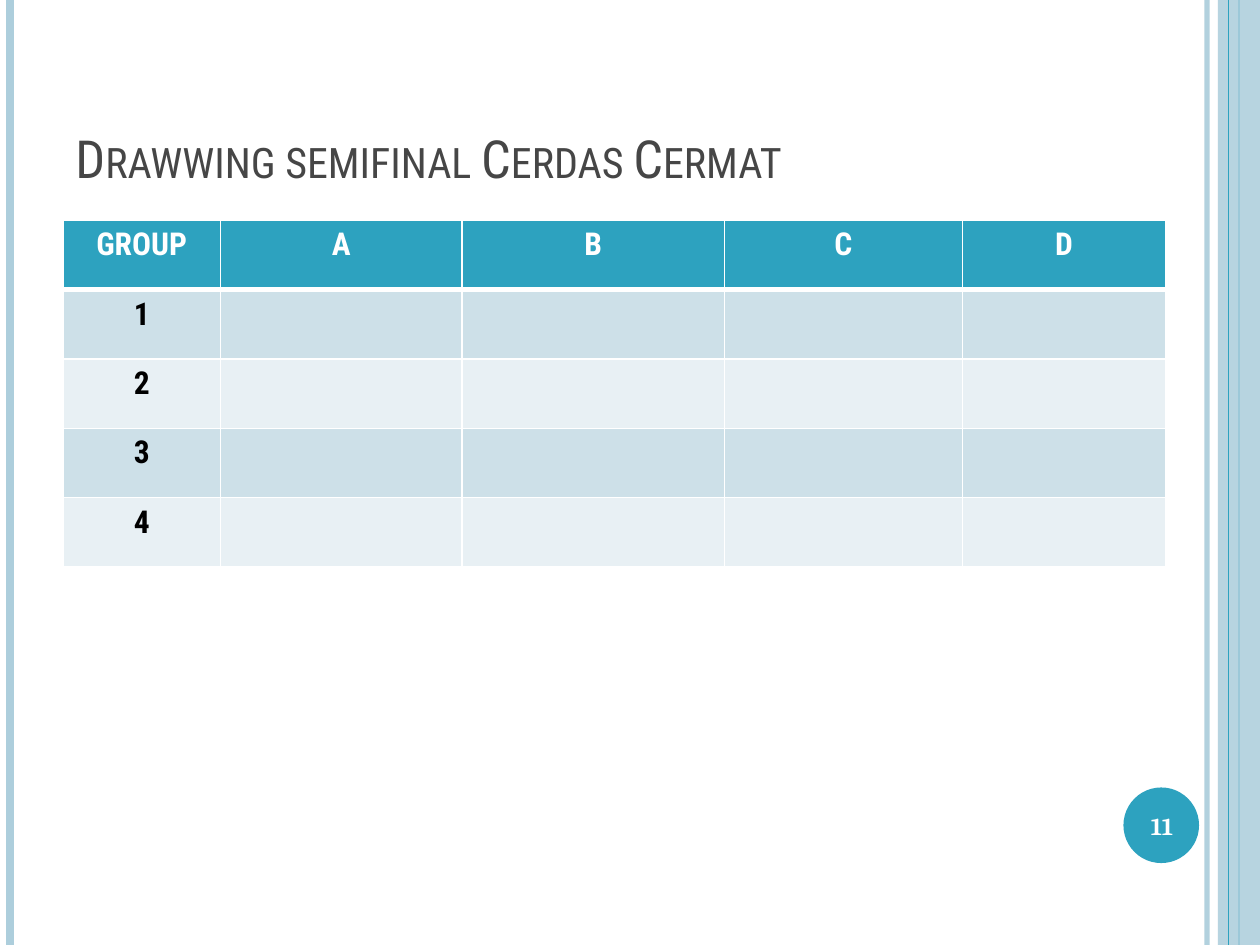
import lxml.etree
import pptx
import pptx.dml.color
import pptx.enum.shapes
import pptx.enum.text
import pptx.oxml.ns
import pptx.util

Pt = pptx.util.Pt
qn = pptx.oxml.ns.qn
ALIGN = pptx.enum.text.PP_ALIGN
ANCHOR = pptx.enum.text.MSO_ANCHOR
SHAPE = pptx.enum.shapes.MSO_SHAPE

TITLE = "Drawwing semifinal Cerdas Cermat"
PAGE_NUMBER = "11"
HEADER = ["GROUP", "A", "B", "C", "D"]
GROUPS = ["1", "2", "3", "4"]

THEME = {
    "accent": "2DA2BF", "pale": "ADCEDC", "title": "464646",
    "white": "FFFFFF", "black": "000000", "bands": ("CDE0E8", "E8F0F4"),
    "font": "Roboto Condensed", "number_font": "Cambria",
    "title_size": 30, "table_size": 18, "number_size": 14,
}

PAGE_WIDTH, PAGE_HEIGHT = 720, 540
TITLE_BOX = (36, 21.6, 588, 90)
TABLE_LEFT, TABLE_TOP, ROW_HEIGHT = 36, 126, 39.6
COLUMN_WIDTHS = [90, 138, 150, 136, 116]
SIDE_PANEL = (696, 0, 24, PAGE_HEIGHT)
NUMBER_DISC = (642, 450, 43.2, 43.2)
NUMBER_BOX = (640, 451.2, 48, 41)

# x, colour, width, opacity in percent
RULES_BEHIND_PANEL = [
    (689.8, "pale", 3, 93), (5.8, "pale", 4.5, 100), (708, "accent", 1.5, 100),
]
RULES_OVER_PANEL = [(702, "accent", 0.75, 100)]


def rgb(value):
    return pptx.dml.color.RGBColor.from_string(value)


def set_opacity(properties, percent):
    """Give the first colour below the element an opacity."""
    if percent < 100:
        color = next(properties.iter(qn("a:srgbClr")))
        lxml.etree.SubElement(color, qn("a:alpha"), val=str(percent * 1000))


def add_rule(page, x, color, width, opacity):
    rule = page.shapes.add_connector(
        pptx.enum.shapes.MSO_CONNECTOR.STRAIGHT, Pt(x), 0, Pt(x), Pt(PAGE_HEIGHT))
    rule.line.color.rgb = rgb(THEME[color])
    rule.line.width = Pt(width)
    properties = rule.line._ln.getparent()
    set_opacity(properties, opacity)
    lxml.etree.SubElement(properties, qn("a:effectLst"))


def add_plain_shape(page, kind, place, color, opacity=100):
    shape = page.shapes.add_shape(kind, *map(Pt, place))
    shape.shadow.inherit = False
    shape.fill.solid()
    shape.fill.fore_color.rgb = rgb(color)
    shape.line.fill.background()
    set_opacity(shape.fill._xPr, opacity)


def add_span(para, text, font, size, color, bold=False):
    span = para.add_run()
    span.text = text
    span.font.name = font
    span.font.size = Pt(size)
    span.font.bold = bold
    span.font.color.rgb = rgb(color)
    return span


def add_box(page, place, anchor, align):
    """Add a text box and return its first paragraph."""
    box = page.shapes.add_textbox(*map(Pt, place))
    box.text_frame.word_wrap = True
    box.text_frame.vertical_anchor = anchor
    para = box.text_frame.paragraphs[0]
    para.alignment = align
    return para


def set_borders(cell, bottom_width, top_width):
    properties = cell._tc.get_or_add_tcPr()
    widths = {"L": 1, "R": 1, "T": top_width, "B": bottom_width}
    for index, (side, width) in enumerate(widths.items()):
        line = lxml.etree.Element(qn("a:ln" + side), w=str(Pt(width)))
        fill = lxml.etree.SubElement(line, qn("a:solidFill"))
        lxml.etree.SubElement(fill, qn("a:srgbClr"), val=THEME["white"])
        properties.insert(index, line)


def add_group_table(page):
    rows = [HEADER] + [[group] + [""] * (len(HEADER) - 1) for group in GROUPS]
    table = page.shapes.add_table(
        len(rows), len(HEADER), Pt(TABLE_LEFT), Pt(TABLE_TOP),
        Pt(sum(COLUMN_WIDTHS)), Pt(ROW_HEIGHT * len(rows))).table
    for column, width in zip(table.columns, COLUMN_WIDTHS):
        column.width = Pt(width)
    for row_index, row in enumerate(rows):
        table.rows[row_index].height = Pt(ROW_HEIGHT)
        is_header = row_index == 0
        fill = THEME["accent"] if is_header else THEME["bands"][(row_index - 1) % 2]
        color = THEME["white"] if is_header else THEME["black"]
        for column_index, text in enumerate(row):
            cell = table.cell(row_index, column_index)
            cell.fill.solid()
            cell.fill.fore_color.rgb = rgb(fill)
            set_borders(cell, 3 if is_header else 1, 3 if row_index == 1 else 1)
            if text:
                para = cell.text_frame.paragraphs[0]
                para.alignment = ALIGN.CENTER
                add_span(para, text, THEME["font"], THEME["table_size"], color, True)


def main():
    deck = pptx.Presentation()
    deck.slide_width, deck.slide_height = Pt(PAGE_WIDTH), Pt(PAGE_HEIGHT)
    page = deck.slides.add_slide(deck.slide_layouts[6])

    for rule in RULES_BEHIND_PANEL:
        add_rule(page, *rule)
    add_plain_shape(page, SHAPE.RECTANGLE, SIDE_PANEL, THEME["pale"], 87)
    for rule in RULES_OVER_PANEL:
        add_rule(page, *rule)
    add_plain_shape(page, SHAPE.OVAL, NUMBER_DISC, THEME["accent"])

    title = add_box(page, TITLE_BOX, ANCHOR.BOTTOM, ALIGN.LEFT)
    span = add_span(title, TITLE, THEME["font"], THEME["title_size"], THEME["title"])
    span.font._element.set("cap", "small")

    add_group_table(page)

    number = add_box(page, NUMBER_BOX, ANCHOR.MIDDLE, ALIGN.CENTER)
    add_span(number, PAGE_NUMBER, THEME["number_font"], THEME["number_size"],
             THEME["white"], True)
    deck.save("out.pptx")


if __name__ == "__main__":
    main()
